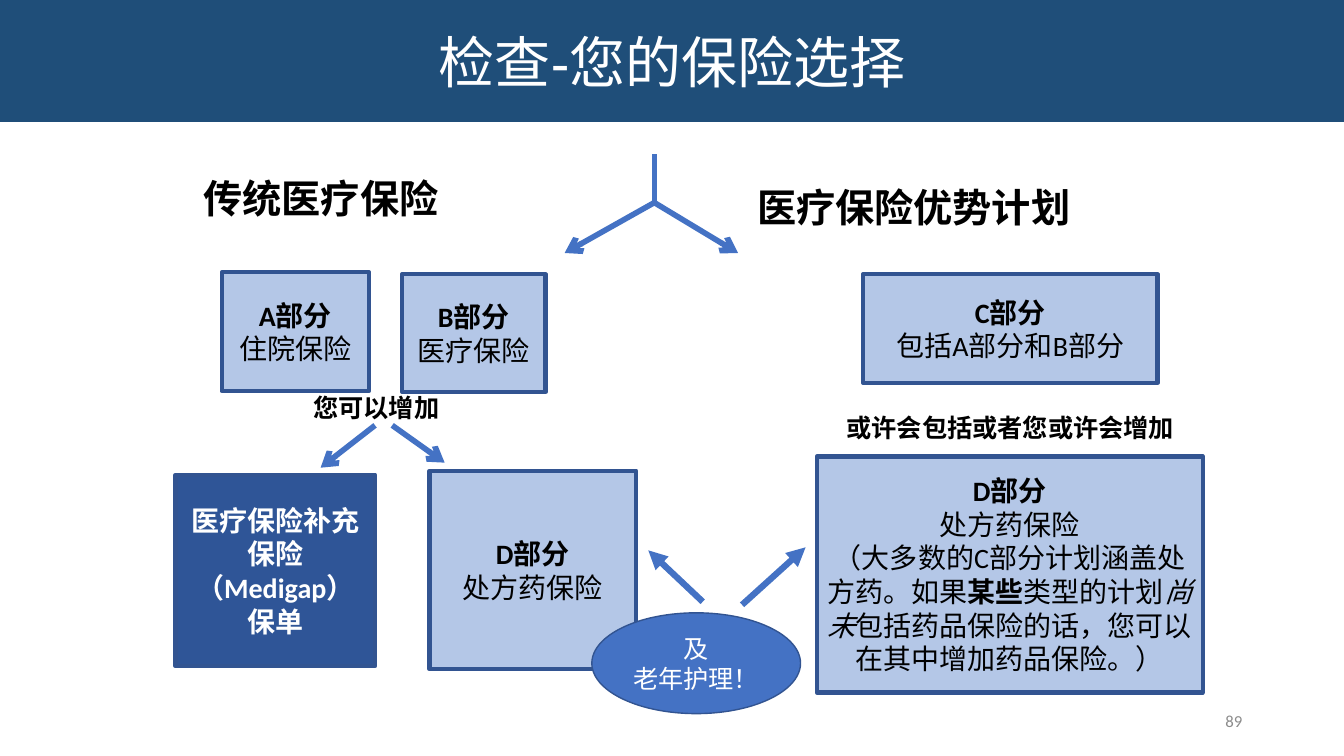
from collections import namedtuple
from dataclasses import dataclass

from lxml import etree
from pptx import Presentation
from pptx.dml.color import RGBColor
from pptx.enum.shapes import MSO_CONNECTOR, MSO_SHAPE
from pptx.enum.text import MSO_ANCHOR, MSO_AUTO_SIZE, PP_ALIGN
from pptx.oxml.ns import qn
from pptx.util import Emu, Pt

PX = 9144
TITLE_ONLY = 5
RECTANGLE, OVAL = MSO_SHAPE.RECTANGLE, MSO_SHAPE.OVAL
STRAIGHT = MSO_CONNECTOR.STRAIGHT
MIDDLE, TOP = MSO_ANCHOR.MIDDLE, MSO_ANCHOR.TOP
LEFT, CENTER, RIGHT = PP_ALIGN.LEFT, PP_ALIGN.CENTER, PP_ALIGN.RIGHT
NO_AUTOFIT = MSO_AUTO_SIZE.NONE

Box = namedtuple("Box", "left top width height")


@dataclass(frozen=True)
class Theme:
    banner: str = "1F4E79"
    accent: str = "4472C4"
    part_fill: str = "B4C7E7"
    medigap_fill: str = "2F5597"
    outline: str = "325491"
    dark: str = "000000"
    light: str = "FFFFFF"
    muted: str = "8C8C8C"
    heading_font: str = "Arial"
    body_font: str = "Calibri"
    title_size: int = 40
    heading_size: int = 28
    part_size: int = 20
    label_size: int = 18
    number_size: int = 12
    outline_width: float = 3
    branch_width: float = 4
    care_arrow_width: float = 4.5


THEME = Theme()


def px(*lengths):
    return [Emu(length * PX) for length in lengths]


def within(region, left, top, width, height):
    return Box(region.left + left, region.top + top, width, height)


def rgb(color):
    return RGBColor.from_string(color)


def write(frame, lines, size, color, font, align=CENTER, anchor=MIDDLE, wrap=True):
    frame.word_wrap = wrap
    frame.vertical_anchor = anchor
    for index, line in enumerate(lines):
        paragraph = frame.add_paragraph() if index else frame.paragraphs[0]
        paragraph.alignment = align
        for words, style in line:
            run = paragraph.add_run()
            run.text = words
            run.font.size = Pt(size)
            run.font.name = font
            run.font.color.rgb = rgb(color)
            run.font.bold = style == "bold"
            run.font.italic = style == "italic"


def add_block(slide, box, lines, fill=THEME.part_fill, color=THEME.dark,
              size=THEME.part_size, kind=RECTANGLE, outline=THEME.outline_width):
    block = slide.shapes.add_shape(kind, *px(*box))
    block.shadow.inherit = False
    block.fill.solid()
    block.fill.fore_color.rgb = rgb(fill)
    block.line.color.rgb = rgb(THEME.outline)
    block.line.width = Pt(outline)
    write(block.text_frame, lines, size, color, THEME.body_font)


def add_label(slide, box, words, size, align=LEFT, wrap=True):
    label = slide.shapes.add_textbox(*px(*box))
    write(label.text_frame, [[(words, "bold")]], size, THEME.dark,
          THEME.heading_font, align, TOP, wrap)


def add_line(slide, region, start, end, head=None, width=THEME.branch_width):
    points = [region.left + start[0], region.top + start[1],
              region.left + end[0], region.top + end[1]]
    line = slide.shapes.add_connector(STRAIGHT, *px(*points))
    line.line.color.rgb = rgb(THEME.accent)
    line.line.width = Pt(width)
    if head:
        etree.SubElement(line.line._get_or_add_ln(), qn("a:tailEnd"), type=head)
    etree.SubElement(line._element.spPr, qn("a:effectLst"))


def part(name, *details):
    return [[(name, "bold")], *[[(detail, "")] for detail in details]]


def build_banner(slide, box):
    title = slide.shapes.title
    title.left, title.top, title.width, title.height = px(*box)
    title.fill.solid()
    title.fill.fore_color.rgb = rgb(THEME.banner)
    title.text_frame.auto_size = NO_AUTOFIT
    write(title.text_frame, [[("检查-您的保险选择", "")]], THEME.title_size,
          THEME.light, THEME.heading_font)


def build_choice(slide, box):
    fork = (457, 48)
    add_line(slide, box, (457, 0), fork)
    for tip in ((368, 98), (540, 98)):
        add_line(slide, box, fork, tip, "arrow")
    add_label(slide, within(box, 0, 15, 351, 57), "传统医疗保险", THEME.heading_size)
    add_label(slide, within(box, 549, 24, 495, 57), "医疗保险优势计划", THEME.heading_size)


def build_traditional(slide, box):
    add_block(slide, within(box, 46, 0, 146, 118), part("A部分", "住院保险"))
    add_block(slide, within(box, 225, 2, 142, 117), part("B部分", "医疗保险"))
    for start, tip in (((198, 152), (144, 194)), ((215, 152), (267, 189))):
        add_line(slide, box, start, tip, "arrow")
    add_block(slide, within(box, 0, 201, 198, 190), part("医疗保险补充保险（Medigap）保单"),
              THEME.medigap_fill, THEME.light)
    add_block(slide, within(box, 252, 197, 205, 197), part("D部分", "处方药保险"))
    add_label(slide, within(box, 127, 114, 146, 40), "您可以增加",
              THEME.label_size, wrap=False)


def build_advantage(slide, box):
    add_block(slide, within(box, 46, 0, 292, 108), part("C部分", "包括A部分和B部分"))
    add_label(slide, within(box, 9, 132, 366, 40), "或许会包括或者您或许会增加",
              THEME.label_size, CENTER)
    coverage = [("（大多数的C部分计划涵盖处方药。如果", ""), ("某些", "bold"),
                ("类型的计划", ""), ("尚未", "italic"),
                ("包括药品保险的话，您可以在其中增加药品保险。）", "")]
    add_block(slide, within(box, 0, 181, 383, 234),
              part("D部分", "处方药保险") + [coverage])


def build_elder_care(slide, box):
    add_block(slide, within(box, 0, 65, 207, 100), [[("及", "")], [("老年护理！", "")]],
              THEME.accent, THEME.light, THEME.label_size, OVAL, 1)
    for start, tip in (((149, 57), (212, 0)), ((110, 54), (56, 3))):
        add_line(slide, box, start, tip, "triangle", THEME.care_arrow_width)


def build_page_number(slide, box):
    number = slide.shapes.add_textbox(*px(*box))
    write(number.text_frame, [[("89", "")]], THEME.number_size, THEME.muted,
          THEME.body_font, RIGHT)


def main():
    deck = Presentation()
    deck.slide_width, deck.slide_height = px(1333, 750)
    slide = deck.slides.add_slide(deck.slide_layouts[TITLE_ONLY])
    build_banner(slide, Box(0, 0, 1333, 121))
    build_choice(slide, Box(192, 153, 1044, 98))
    build_traditional(slide, Box(174, 270, 457, 394))
    build_advantage(slide, Box(810, 272, 383, 415))
    build_elder_care(slide, Box(587, 543, 212, 165))
    build_page_number(slide, Box(942, 695, 300, 40))
    deck.save("out.pptx")


if __name__ == "__main__":
    main()
